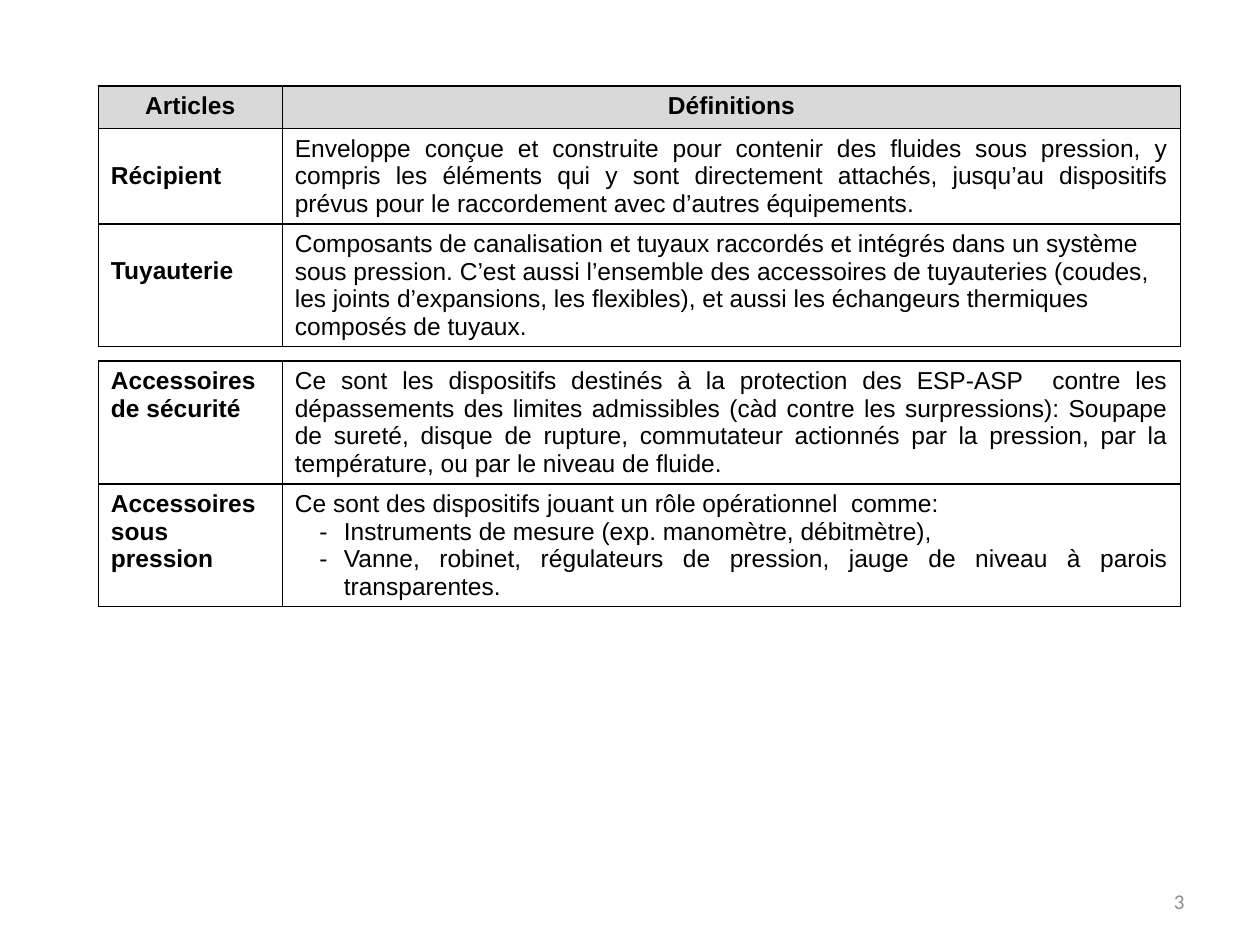
from dataclasses import dataclass

from lxml import etree
from pptx import Presentation
from pptx.dml.color import RGBColor as RGB
from pptx.enum.text import MSO_ANCHOR as ANCHOR, PP_ALIGN as ALIGN
from pptx.oxml.ns import qn
from pptx.util import Pt


@dataclass(frozen=True)
class Theme:
    ink: RGB = RGB(0, 0, 0)
    paper: RGB = RGB(255, 255, 255)
    header: RGB = RGB(0xD9, 0xD9, 0xD9)
    muted: RGB = RGB(0x8C, 0x8C, 0x8C)
    body_font: str = "Arial"
    number_font: str = "Calibri"
    body_size: int = 14
    number_size: int = 12
    border: int = 1


theme = Theme()
LEFT = 56.2
COLUMNS = (105.1, 513.4)
LINE = 15.7  # height of one line of body text
PAD = 3.6    # top margin of a cell


def write(p, text, font, size, color, bold=False, align=ALIGN.LEFT):
    p.alignment = align
    r = p.add_run()
    r.text = text
    r.font.name, r.font.size, r.font.bold = font, Pt(size), bold
    r.font.color.rgb = color


def draw_borders(cell):
    tc_pr = cell._tc.get_or_add_tcPr()
    for side in ("lnL", "lnR", "lnT", "lnB"):
        ln = etree.SubElement(tc_pr, qn(f"a:{side}"), w=str(Pt(theme.border)))
        fill = etree.SubElement(ln, qn("a:solidFill"))
        etree.SubElement(fill, qn("a:srgbClr"), val=str(theme.ink))


# Content: each row is (height, lines the label is lowered, label, definition, alignment);
# definition lines after the first are dashed list items
HEADER = (24.4, 0, "Articles", ["Définitions"], ALIGN.CENTER)
tables = [
    (49, [
        HEADER,
        (54.6, 1, "Récipient", [
            "Enveloppe conçue et construite pour contenir des fluides sous pression, "
            "y compris les éléments qui y sont directement attachés, jusqu’au "
            "dispositifs prévus pour le raccordement avec d’autres équipements."],
         ALIGN.JUSTIFY),
        (70, 1, "Tuyauterie", [
            "Composants de canalisation et tuyaux raccordés et intégrés dans un "
            "système sous pression. C’est aussi l’ensemble des accessoires de "
            "tuyauteries (coudes, les joints d’expansions, les flexibles), et aussi "
            "les échangeurs thermiques composés de tuyaux."],
         ALIGN.LEFT),
    ]),
    (206.4, [
        (70, 0, "Accessoires de sécurité", [
            "Ce sont les dispositifs destinés à la protection des ESP-ASP  contre les "
            "dépassements des limites admissibles (càd contre les surpressions): "
            "Soupape de sureté, disque de rupture, commutateur actionnés par la "
            "pression, par la température, ou par le niveau de fluide."],
         ALIGN.JUSTIFY),
        (70, 0, "Accessoires sous pression", [
            "Ce sont des dispositifs jouant un rôle opérationnel  comme:",
            "Instruments de mesure (exp. manomètre, débitmètre),",
            "Vanne, robinet, régulateurs de pression, jauge de niveau à parois "
            "transparentes."],
         ALIGN.JUSTIFY),
    ]),
]

prs = Presentation()
prs.slide_width, prs.slide_height = Pt(720), Pt(540)
s = prs.slides.add_slide(prs.slide_layouts[6])

# Definition tables
for top, rows in tables:
    height = sum(row[0] for row in rows)
    table = s.shapes.add_table(len(rows), len(COLUMNS), Pt(LEFT), Pt(top),
                               Pt(sum(COLUMNS)), Pt(height)).table
    table.first_row = table.horz_banding = False
    for column, width in zip(table.columns, COLUMNS):
        column.width = Pt(width)

    for i, (row_height, lowered, label, definition, align) in enumerate(rows):
        is_header = rows[i] is HEADER
        table.rows[i].height = Pt(row_height)
        label_cell, definition_cell = table.cell(i, 0), table.cell(i, 1)
        for cell in (label_cell, definition_cell):
            draw_borders(cell)
            cell.fill.solid()
            cell.fill.fore_color.rgb = theme.header if is_header else theme.paper
        label_cell.margin_top = Pt(PAD + lowered * LINE)

        write(label_cell.text_frame.paragraphs[0], label, theme.body_font,
              theme.body_size, theme.ink, True,
              ALIGN.CENTER if is_header else ALIGN.LEFT)
        tf = definition_cell.text_frame
        for n, text in enumerate(definition):
            p = tf.add_paragraph() if n else tf.paragraphs[0]
            write(p, text, theme.body_font, theme.body_size, theme.ink,
                  is_header, align)
            if n:  # dashed list item
                p_pr = p._p.get_or_add_pPr()
                p_pr.set("marL", str(Pt(28)))
                p_pr.set("indent", str(Pt(-14)))
                etree.SubElement(p_pr, qn("a:buFont"), typeface=theme.body_font)
                etree.SubElement(p_pr, qn("a:buChar"), char="-")

# Slide number
sp = s.shapes.add_textbox(Pt(516), Pt(500.5), Pt(168), Pt(28.8))
tf = sp.text_frame
tf.word_wrap = True
tf.vertical_anchor = ANCHOR.MIDDLE
write(tf.paragraphs[0], "3", theme.number_font, theme.number_size, theme.muted,
      align=ALIGN.RIGHT)

prs.save("out.pptx")
